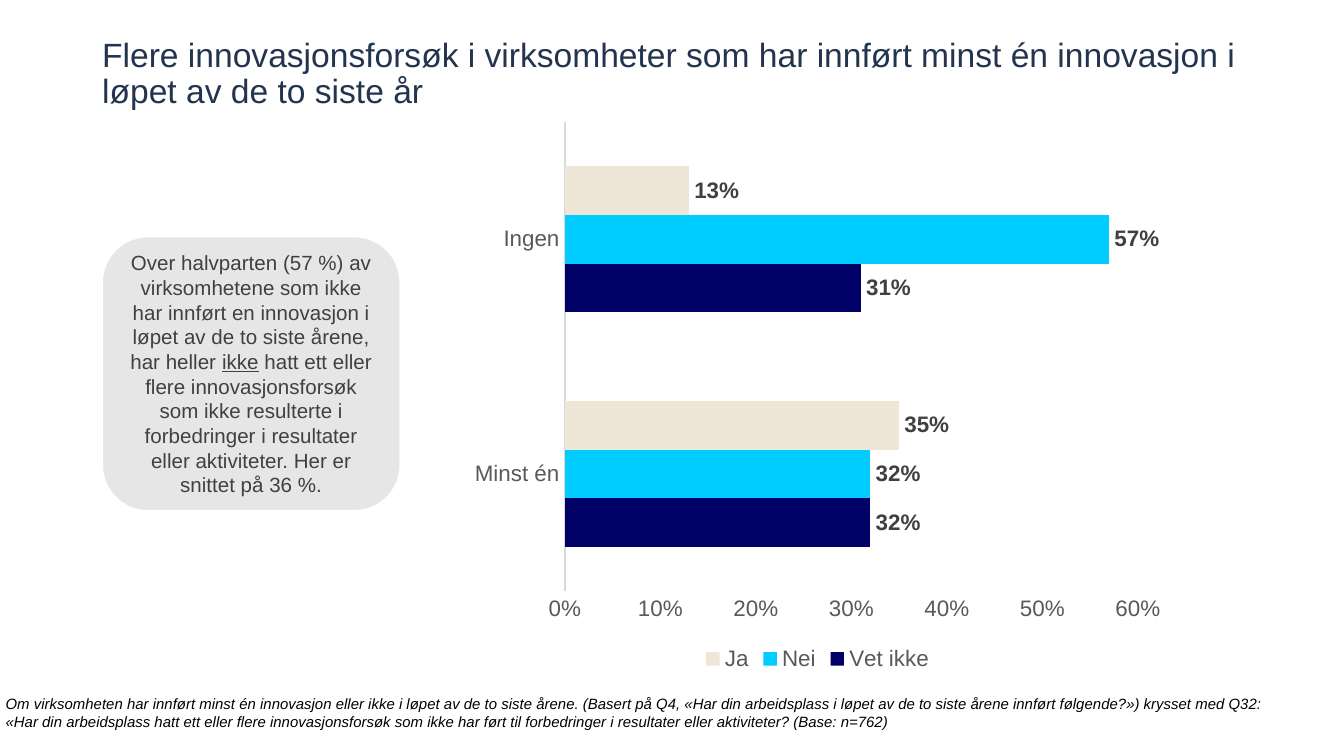
"""Build a slide on innovation attempts with a clustered bar chart."""
from pptx import Presentation
from pptx.chart.data import CategoryChartData
from pptx.dml.color import RGBColor
from pptx.enum.chart import XL_CHART_TYPE, XL_LABEL_POSITION, XL_LEGEND_POSITION, XL_TICK_MARK
from pptx.enum.shapes import MSO_SHAPE
from pptx.enum.text import MSO_ANCHOR, MSO_AUTO_SIZE, PP_ALIGN
from pptx.util import Pt

PX = 9525
BAR = XL_CHART_TYPE.BAR_CLUSTERED
OUTSIDE = XL_LABEL_POSITION.OUTSIDE_END
BOTTOM_LEGEND = XL_LEGEND_POSITION.BOTTOM
NO_TICK = XL_TICK_MARK.NONE
ROUNDED = MSO_SHAPE.ROUNDED_RECTANGLE
BOTTOM, MIDDLE = MSO_ANCHOR.BOTTOM, MSO_ANCHOR.MIDDLE
NO_FIT = MSO_AUTO_SIZE.NONE
LEFT, CENTER = PP_ALIGN.LEFT, PP_ALIGN.CENTER


def rgb(value):
    return RGBColor.from_string(value)


def style(font, size, color, bold=False):
    font.name = "Arial"
    font.size = Pt(size)
    font.bold = bold
    font.color.rgb = rgb(color)


prs = Presentation()
prs.slide_width, prs.slide_height = 960 * PX, 540 * PX
slide = prs.slides.add_slide(prs.slide_layouts[5])

title = slide.shapes.title
title.left, title.top, title.width, title.height = [n * PX for n in (73, 47, 848, 32)]
heading = title.text_frame
heading.text = "Flere innovasjonsforsøk i virksomheter som har innført minst én innovasjon i løpet av de to siste år"
heading.vertical_anchor = BOTTOM
heading.paragraphs[0].alignment = LEFT
heading.paragraphs[0].line_spacing = 0.9
style(heading.paragraphs[0].runs[0].font, 18, "23344F")

footnote = slide.shapes.add_textbox(*[n * PX for n in (4, 496, 917, 26)]).text_frame
footnote.text = (
    "Om virksomheten har innført minst én innovasjon eller ikke i løpet av de to siste årene. "
    "(Basert på Q4, «Har din arbeidsplass i løpet av de to siste årene innført følgende?») "
    "krysset med Q32: «Har din arbeidsplass hatt ett eller flere innovasjonsforsøk som ikke "
    "har ført til forbedringer i resultater eller aktiviteter? (Base: n=762)"
)
footnote.word_wrap = True
style(footnote.paragraphs[0].runs[0].font, 8, "000000")
footnote.paragraphs[0].runs[0].font.italic = True

for frame in (heading, footnote):
    frame.auto_size = NO_FIT
    frame.margin_left = frame.margin_right = frame.margin_top = frame.margin_bottom = 0

answers = [
    ("Vet ikke", (0.32, 0.31), "000066"),
    ("Nei", (0.32, 0.57), "00CCFF"),
    ("Ja", (0.35, 0.13), "F0E6D8"),
]
data = CategoryChartData(number_format="0%")
data.categories = ["Minst én", "Ingen"]
for answer, shares, color in answers:
    data.add_series(answer, shares)
chart = slide.shapes.add_chart(BAR, *[n * PX for n in (329, 79, 510, 404)], data).chart
style(chart.font, 10, "000000")
chart.has_title = False
chart.has_legend = True
chart.legend.position = BOTTOM_LEGEND
chart.legend.include_in_layout = False
style(chart.legend.font, 12, "595959")

bars = chart.plots[0]
bars.gap_width = 182
bars.overlap = 0
bars.vary_by_categories = False
for series, (answer, shares, color) in zip(bars.series, answers):
    series.format.fill.solid()
    series.format.fill.fore_color.rgb = rgb(color)
    labels = series.data_labels
    labels.show_value = True
    labels.position = OUTSIDE
    labels.number_format = "0%"
    labels.number_format_is_linked = False
    style(labels.font, 12, "404040", bold=True)

innovations, share_axis = chart.category_axis, chart.value_axis
for axis in (innovations, share_axis):
    axis.major_tick_mark = axis.minor_tick_mark = NO_TICK
    axis.has_major_gridlines = False
    style(axis.tick_labels.font, 12, "595959")
innovations.format.line.color.rgb = rgb("D9D9D9")
innovations.format.line.width = Pt(0.75)
share_axis.format.line.fill.background()
share_axis.minimum_scale, share_axis.maximum_scale, share_axis.major_unit = 0, 0.6, 0.1
share_axis.tick_labels.number_format = "0%"
share_axis.tick_labels.number_format_is_linked = False

callout = slide.shapes.add_shape(ROUNDED, *[n * PX for n in (73, 169, 213, 196)])
callout.shadow.inherit = False
callout.fill.solid()
callout.fill.fore_color.rgb = rgb("E7E6E6")
callout.line.color.rgb = rgb("FFFFFF")
callout.line.width = Pt(1)
callout.text_frame.word_wrap = True
callout.text_frame.vertical_anchor = MIDDLE
finding = callout.text_frame.paragraphs[0]
finding.alignment = CENTER
for words, underlined in [
    ("Over halvparten (57 %) av virksomhetene som ikke har innført en innovasjon i løpet av "
     "de to siste årene, har heller ", False),
    ("ikke", True),
    (" hatt ett eller flere innovasjonsforsøk som ikke resulterte i forbedringer i resultater "
     "eller aktiviteter. Her er snittet på 36 %.", False),
]:
    run = finding.add_run()
    run.text = words
    style(run.font, 11, "404040")
    run.font.underline = underlined

prs.save("out.pptx")
